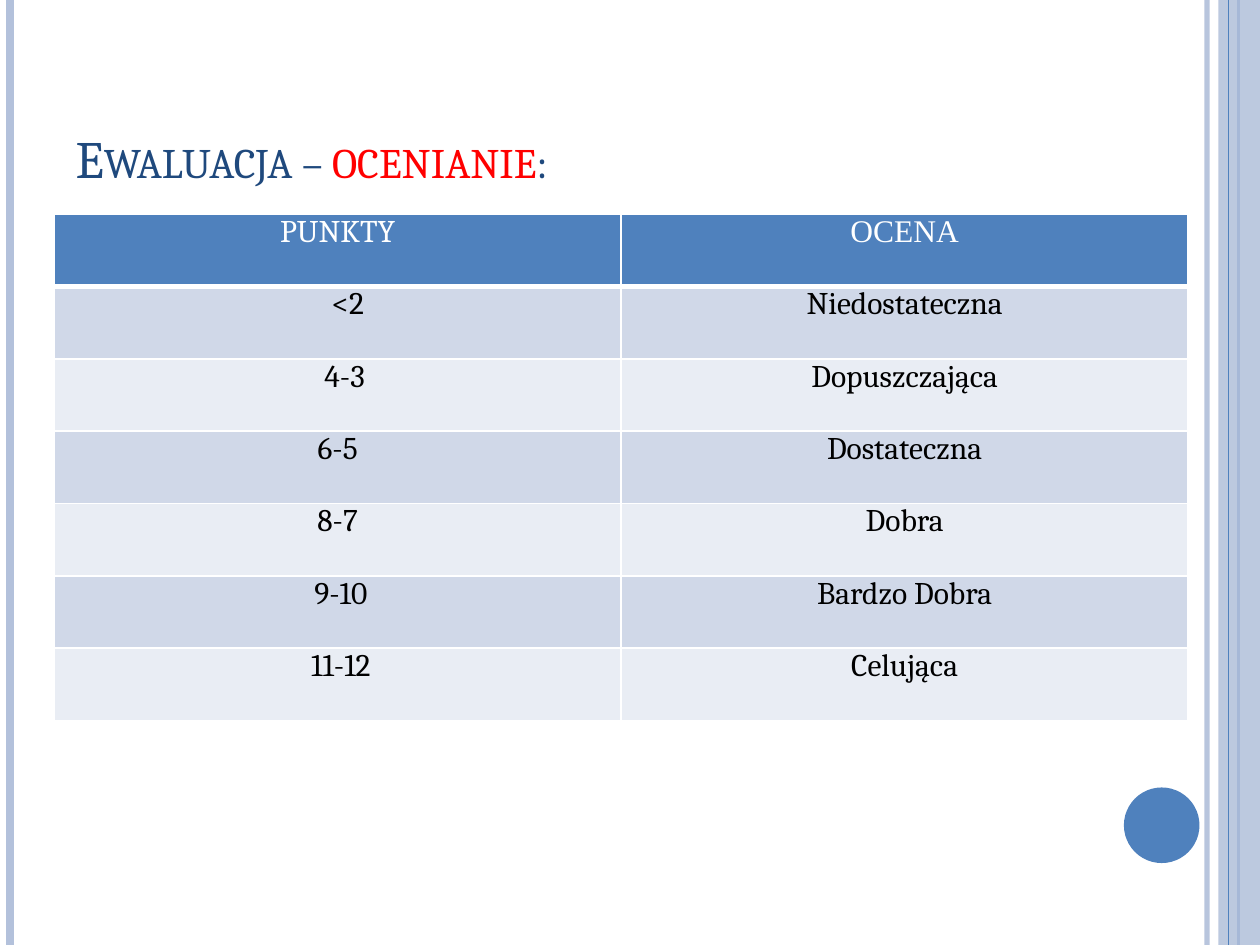
import pptx
import pptx.util
import pptx.dml.color
import pptx.enum.shapes
import pptx.enum.text
import pptx.oxml
import pptx.oxml.ns
from lxml import etree

WIDTH, HEIGHT = 10, 7.5
FONT = "Cambria"
COLOURS = {
    "blue": "4F81BD", "pale": "B3C1DB", "navy": "1F497D", "red": "FF0000",
    "white": "FFFFFF", "black": "000000", "dark band": "D0D8E8", "light band": "E9EDF4",
}
# Points, grade, extra left inset that nudges the points to the right
GRADES = [
    ("PUNKTY", "OCENA", 0),
    ("<2", "Niedostateczna", 0.16),
    ("4-3", "Dopuszczająca", 0.11),
    ("6-5", "Dostateczna", 0),
    ("8-7", "Dobra", 0),
    ("9-10", "Bardzo Dobra", 0.05),
    ("11-12", "Celująca", 0.05),
]
ROW_HEIGHT = 4.02 / len(GRADES)


def inches(*lengths):
    return [pptx.util.Inches(length) for length in lengths]


def colour(name):
    return pptx.dml.color.RGBColor.from_string(COLOURS[name])


def add_child(parent, tag, **attributes):
    return etree.SubElement(parent, pptx.oxml.ns.qn(tag), **attributes)


def set_opacity(properties, percent):
    solid = next(properties.iter(pptx.oxml.ns.qn("a:srgbClr")))
    add_child(solid, "a:alpha", val=str(percent * 1000))


def add_stripe(page, x, width, name, opacity=100):
    stripe = page.shapes.add_connector(
        pptx.enum.shapes.MSO_CONNECTOR.STRAIGHT, *inches(x, 0, x, HEIGHT))
    stripe.line.color.rgb = colour(name)
    stripe.line.width = pptx.util.Pt(width)
    properties = stripe.line._get_or_add_ln().getparent()
    add_child(properties, "a:effectLst")
    if opacity < 100:
        set_opacity(properties, opacity)


def add_block(page, kind, place, name, opacity=100):
    block = page.shapes.add_shape(kind, *inches(*place))
    block.shadow.inherit = False
    block.fill.solid()
    block.fill.fore_color.rgb = colour(name)
    block.line.fill.background()
    if opacity < 100:
        set_opacity(block._element.spPr, opacity)


def add_decoration(page):
    shapes = pptx.enum.shapes.MSO_SHAPE
    add_stripe(page, 9.58, 3, "pale", 93)
    add_stripe(page, 0.08, 4.5, "pale")
    add_stripe(page, 9.83, 1.5, "blue")
    add_block(page, shapes.RECTANGLE, (9.67, 0, 0.33, HEIGHT), "pale", 87)
    add_stripe(page, 9.75, 0.75, "blue")
    add_block(page, shapes.OVAL, (8.92, 6.25, 0.6, 0.6), "blue")


def set_title(page):
    title = page.shapes.title
    title.left, title.top, title.width, title.height = inches(0.5, 0.3, 8.17, 1.25)
    frame = title.text_frame
    frame.auto_size = pptx.enum.text.MSO_AUTO_SIZE.NONE
    frame.vertical_anchor = pptx.enum.text.MSO_ANCHOR.BOTTOM
    para = frame.paragraphs[0]
    para.alignment = pptx.enum.text.PP_ALIGN.LEFT
    para.font.size = pptx.util.Pt(30)
    para.font.name = FONT
    for text, name in (("Ewaluacja – ", "navy"), ("ocenianie", "red"), (":", "navy")):
        span = para.add_run()
        span.text = text
        span.font.color.rgb = colour(name)
        span.font._element.set("cap", "small")


def set_borders(cell, bottom_width):
    properties = cell._tc.get_or_add_tcPr()
    widths = {"a:lnL": 1, "a:lnR": 1, "a:lnT": 1, "a:lnB": bottom_width}
    for position, (tag, width) in enumerate(widths.items()):
        border = pptx.oxml.parse_xml(
            f'<{tag} {pptx.oxml.ns.nsdecls("a")} w="{pptx.util.Pt(width)}"><a:solidFill>'
            f'<a:srgbClr val="{COLOURS["white"]}"/></a:solidFill></{tag}>')
        properties.insert(position, border)


def fill_cell(cell, text, fill, ink, font, nudge):
    cell.margin_left, cell.margin_right = inches(0.07 + nudge, 0.07)
    cell.margin_top = cell.margin_bottom = 0
    cell.fill.solid()
    cell.fill.fore_color.rgb = colour(fill)
    cell.text = text
    para = cell.text_frame.paragraphs[0]
    para.alignment = pptx.enum.text.PP_ALIGN.CENTER
    para.font.size = pptx.util.Pt(18)
    para.font.name = font
    para.font.color.rgb = colour(ink)


def add_grades(page):
    frame = page.shapes.add_table(
        len(GRADES), 2, *inches(0.43, 1.7, 9, ROW_HEIGHT * len(GRADES)))
    table = frame.table
    table.first_row = table.horz_banding = False
    for row, (points, grade, nudge) in enumerate(GRADES):
        header = row == 0
        fill = "blue" if header else ("light band", "dark band")[row % 2]
        ink = "white" if header else "black"
        for column, text in enumerate((points, grade)):
            cell = table.cell(row, column)
            font = "Times New Roman" if header and column == 1 else FONT
            fill_cell(cell, text, fill, ink, font, 0 if column else nudge)
            set_borders(cell, 3 if header else 1)


def main():
    deck = pptx.Presentation()
    deck.slide_width, deck.slide_height = inches(WIDTH, HEIGHT)
    page = deck.slides.add_slide(deck.slide_layouts.get_by_name("Title Only"))
    add_decoration(page)
    set_title(page)
    add_grades(page)
    deck.save("out.pptx")


if __name__ == "__main__":
    main()
